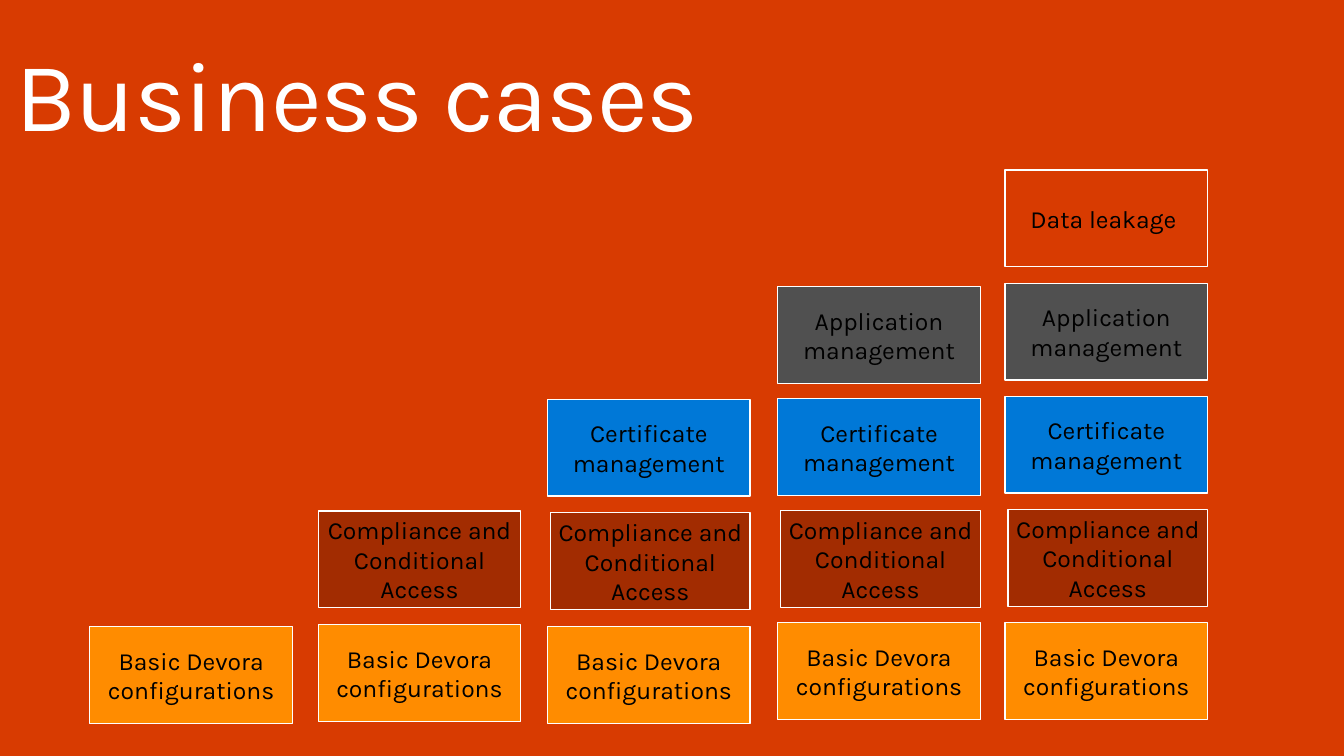
"""Build a slide of business cases as a staircase of stacked capabilities."""
from dataclasses import dataclass

from pptx import Presentation
from pptx.dml.color import RGBColor as Rgb
from pptx.enum.shapes import MSO_SHAPE as Shape
from pptx.enum.text import MSO_ANCHOR as Anchor, MSO_AUTO_SIZE as AutoSize, PP_ALIGN as Align
from pptx.util import Inches, Pt

TITLE = "Business cases"
CAPABILITIES = [
    ("Basic Devora configurations", "FF8C00"),
    ("Compliance and Conditional Access", "A22C01"),
    ("Certificate management", "0078D7"),
    ("Application management", "505050"),
    ("Data leakage ", "D83B01"),
]
CASES = [
    {"left": 0.91, "base": 6.34, "top": 6.34, "inset": 0},
    {"left": 3.22, "base": 6.32, "top": 5.17, "inset": 0},
    {"left": 5.54, "base": 6.34, "top": 4.04, "inset": 0.03},
    {"left": 7.87, "base": 6.3, "top": 2.9, "inset": 0.03},
    {"left": 10.17, "base": 6.3, "top": 1.72, "inset": 0.03},
]
BOX_WIDTH, BOX_HEIGHT = 2.05, 0.98
INSET_LEVEL = 1


@dataclass(frozen=True)
class Theme:
    """Colours, font and type sizes."""
    background: str = "D83B01"
    light: str = "FFFFFF"
    dark: str = "000000"
    font: str = "Karla"
    title_size: float = 72
    label_size: float = 18
    outline: float = 0.85


THEME = Theme()


def write(shape, text, *, size, color, margins, align=Align.LEFT, anchor=Anchor.TOP,
          line_spacing=None, tracking=None, autosize=AutoSize.NONE):
    """Put formatted text into a shape."""
    frame = shape.text_frame
    frame.word_wrap = True
    frame.auto_size = autosize
    frame.vertical_anchor = anchor
    side, edge = margins
    frame.margin_left = frame.margin_right = Inches(side)
    frame.margin_top = frame.margin_bottom = Inches(edge)
    paragraph = frame.paragraphs[0]
    paragraph.alignment = align
    if line_spacing:
        paragraph.line_spacing = line_spacing
    run = paragraph.add_run()
    run.text = text
    run.font.name = THEME.font
    run.font.size = Pt(size)
    run.font.color.rgb = Rgb.from_string(color)
    if tracking:
        run.font._element.set("spc", str(tracking * 100))


def add_capability(slide, label, fill, left, top, width):
    """Draw one capability box."""
    box = slide.shapes.add_shape(
        Shape.RECTANGLE, Inches(left), Inches(top), Inches(width), Inches(BOX_HEIGHT))
    box.shadow.inherit = False
    box.fill.solid()
    box.fill.fore_color.rgb = Rgb.from_string(fill)
    box.line.color.rgb = Rgb.from_string(THEME.light)
    box.line.width = Pt(THEME.outline)
    write(box, label, size=THEME.label_size, color=THEME.dark, margins=(0, 0.05),
          align=Align.CENTER, anchor=Anchor.MIDDLE)


def main():
    """Lay out the slide and save it."""
    deck = Presentation()
    deck.slide_width, deck.slide_height = Inches(13.6), Inches(7.65)
    slide = deck.slides.add_slide(deck.slide_layouts[6])
    slide.background.fill.solid()
    slide.background.fill.fore_color.rgb = Rgb.from_string(THEME.background)

    heading = slide.shapes.add_textbox(Inches(0), Inches(0.37), Inches(13), Inches(1.29))
    write(heading, TITLE, size=THEME.title_size, color=THEME.light, margins=(0.16, 0.1),
          line_spacing=0.9, tracking=-1, autosize=AutoSize.SHAPE_TO_FIT_TEXT)

    for steps, case in enumerate(CASES):
        pitch = (case["base"] - case["top"]) / max(steps, 1)
        for level, (label, fill) in enumerate(CAPABILITIES[:steps + 1]):
            inset = case["inset"] if level == INSET_LEVEL else 0
            add_capability(slide, label, fill, case["left"] + inset,
                           case["base"] - level * pitch, BOX_WIDTH - inset)

    deck.save("out.pptx")


if __name__ == "__main__":
    main()
